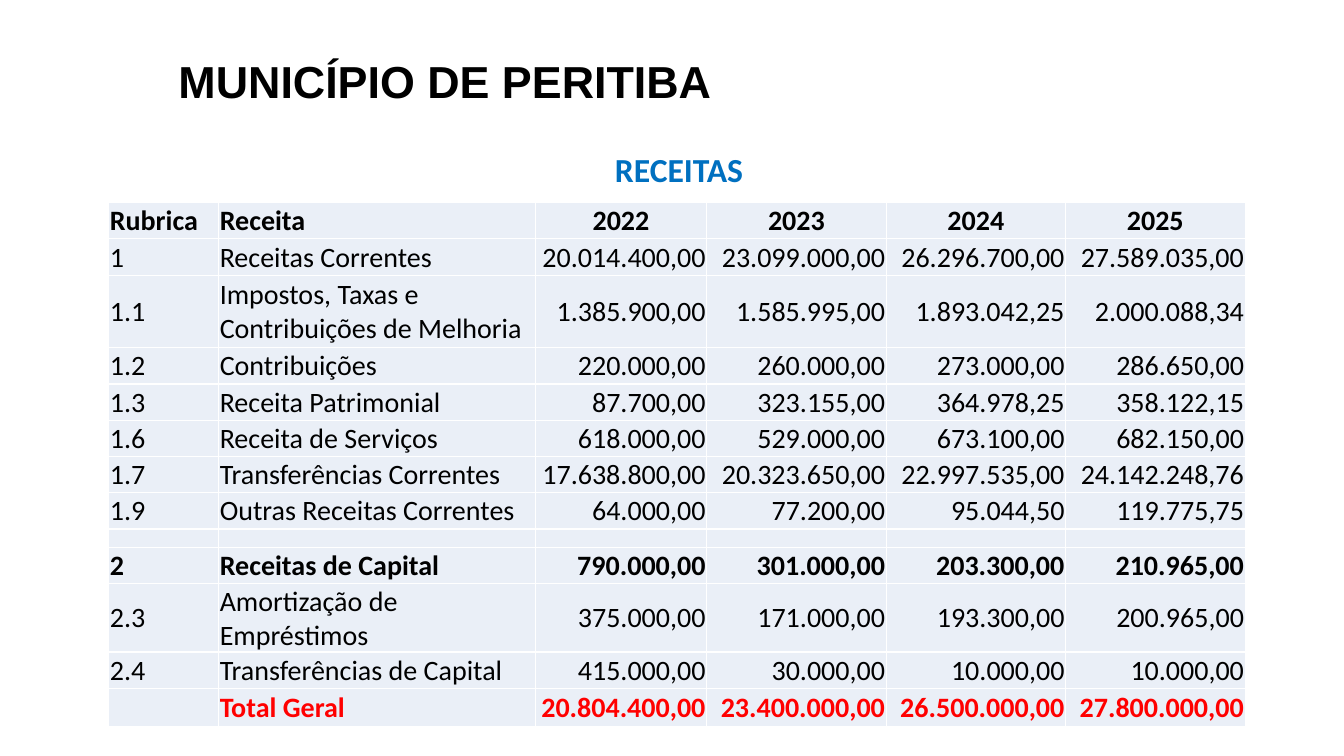
import pptx
import pptx.dml.color
import pptx.enum.text
import pptx.oxml.ns
import pptx.util
from lxml import etree

Inches = pptx.util.Inches
Pt = pptx.util.Pt
ALIGN = pptx.enum.text.PP_ALIGN
ANCHOR = pptx.enum.text.MSO_ANCHOR
qn = pptx.oxml.ns.qn

TITLE = "MUNICÍPIO DE PERITIBA"
SUBTITLE = "RECEITAS"
BLACK, BLUE, RED, WHITE, CELL_FILL = "000000", "0070C0", "FF0000", "FFFFFF", "EAEFF7"

REVENUE = [
    ("Rubrica", "Receita", "2022", "2023", "2024", "2025"),
    ("1", "Receitas Correntes", "20.014.400,00", "23.099.000,00", "26.296.700,00", "27.589.035,00"),
    ("1.1", "Impostos, Taxas e Contribuições de Melhoria",
     "1.385.900,00", "1.585.995,00", "1.893.042,25", "2.000.088,34"),
    ("1.2", "Contribuições", "220.000,00", "260.000,00", "273.000,00", "286.650,00"),
    ("1.3", "Receita Patrimonial", "87.700,00", "323.155,00", "364.978,25", "358.122,15"),
    ("1.6", "Receita de Serviços", "618.000,00", "529.000,00", "673.100,00", "682.150,00"),
    ("1.7", "Transferências Correntes",
     "17.638.800,00", "20.323.650,00", "22.997.535,00", "24.142.248,76"),
    ("1.9", "Outras Receitas Correntes", "64.000,00", "77.200,00", "95.044,50", "119.775,75"),
    ("",) * 6,
    ("2", "Receitas de Capital", "790.000,00", "301.000,00", "203.300,00", "210.965,00"),
    ("2.3", "Amortização de Empréstimos", "375.000,00", "171.000,00", "193.300,00", "200.965,00"),
    ("2.4", "Transferências de Capital", "415.000,00", "30.000,00", "10.000,00", "10.000,00"),
    ("", "Total Geral", "20.804.400,00", "23.400.000,00", "26.500.000,00", "27.800.000,00"),
]
COL_WIDTHS = (1.09, 3.14, 1.7, 1.78, 1.78, 1.78)
ROW_HEIGHT = 0.36
SPECIAL_HEIGHTS = {2: 0.72, 8: 0.18, 10: 0.68, 12: 0.38}
HEADER, SPACER, CAPITAL, TOTAL = 0, 8, 9, 12


def rgb(color):
    return pptx.dml.color.RGBColor.from_string(color)


def write(tf, text, size=20, font="Calibri", color=BLACK, bold=False, align=ALIGN.LEFT):
    p = tf.paragraphs[0]
    p.alignment = align
    r = p.add_run()
    r.text = text
    r.font.size = Pt(size)
    r.font.name = font
    r.font.bold = bold
    r.font.color.rgb = rgb(color)


def style_cell(cell):
    """Set the margins, white borders and fill of a cell."""
    cell.margin_left = cell.margin_right = cell.margin_top = Inches(0.01)
    cell.margin_bottom = 0
    cell.vertical_anchor = ANCHOR.MIDDLE
    tc_pr = cell._tc.get_or_add_tcPr()
    for side in ("a:lnL", "a:lnR", "a:lnT", "a:lnB"):
        ln = etree.SubElement(tc_pr, qn(side), w=str(Pt(1)))
        fill = etree.SubElement(ln, qn("a:solidFill"))
        etree.SubElement(fill, qn("a:srgbClr"), val=WHITE)
    cell.fill.solid()
    cell.fill.fore_color.rgb = rgb(CELL_FILL)


def add_revenue_table(slide):
    heights = [SPECIAL_HEIGHTS.get(i, ROW_HEIGHT) for i in range(len(REVENUE))]
    table = slide.shapes.add_table(
        len(REVENUE), len(COL_WIDTHS), Inches(1.08), Inches(2.01),
        Inches(sum(COL_WIDTHS)), Inches(sum(heights))).table
    table.horz_banding = table.first_row = False
    for column, width in zip(table.columns, COL_WIDTHS):
        column.width = Inches(width)
    for i, values in enumerate(REVENUE):
        table.rows[i].height = Inches(heights[i])
        for j, value in enumerate(values):
            cell = table.cell(i, j)
            style_cell(cell)
            if not value:
                p = cell.text_frame.paragraphs[0]
                etree.SubElement(p._p, qn("a:endParaRPr"), sz="800")
                continue
            number_align = ALIGN.CENTER if i == HEADER else ALIGN.RIGHT
            write(cell.text_frame, value,
                  bold=i in (HEADER, CAPITAL, TOTAL),
                  color=RED if i == TOTAL else BLACK,
                  align=number_align if j >= 2 else ALIGN.LEFT)


def main():
    prs = pptx.Presentation()
    prs.slide_width, prs.slide_height = Inches(13.33), Inches(7.5)
    s = prs.slides.add_slide(prs.slide_layouts[5])

    title = s.shapes.title
    title.left, title.top = Inches(1.67), Inches(0.48)
    title.width, title.height = Inches(8.03), Inches(0.64)
    title.text_frame.vertical_anchor = ANCHOR.MIDDLE
    write(title.text_frame, TITLE, size=32, font="Arial", bold=True)

    sp = s.shapes.add_textbox(Inches(0.76), Inches(1.43), Inches(11.95), Inches(1.11))
    sp.text_frame.word_wrap = True
    write(sp.text_frame, SUBTITLE, size=24, color=BLUE, bold=True, align=ALIGN.CENTER)

    add_revenue_table(s)
    prs.save("out.pptx")


if __name__ == "__main__":
    main()
